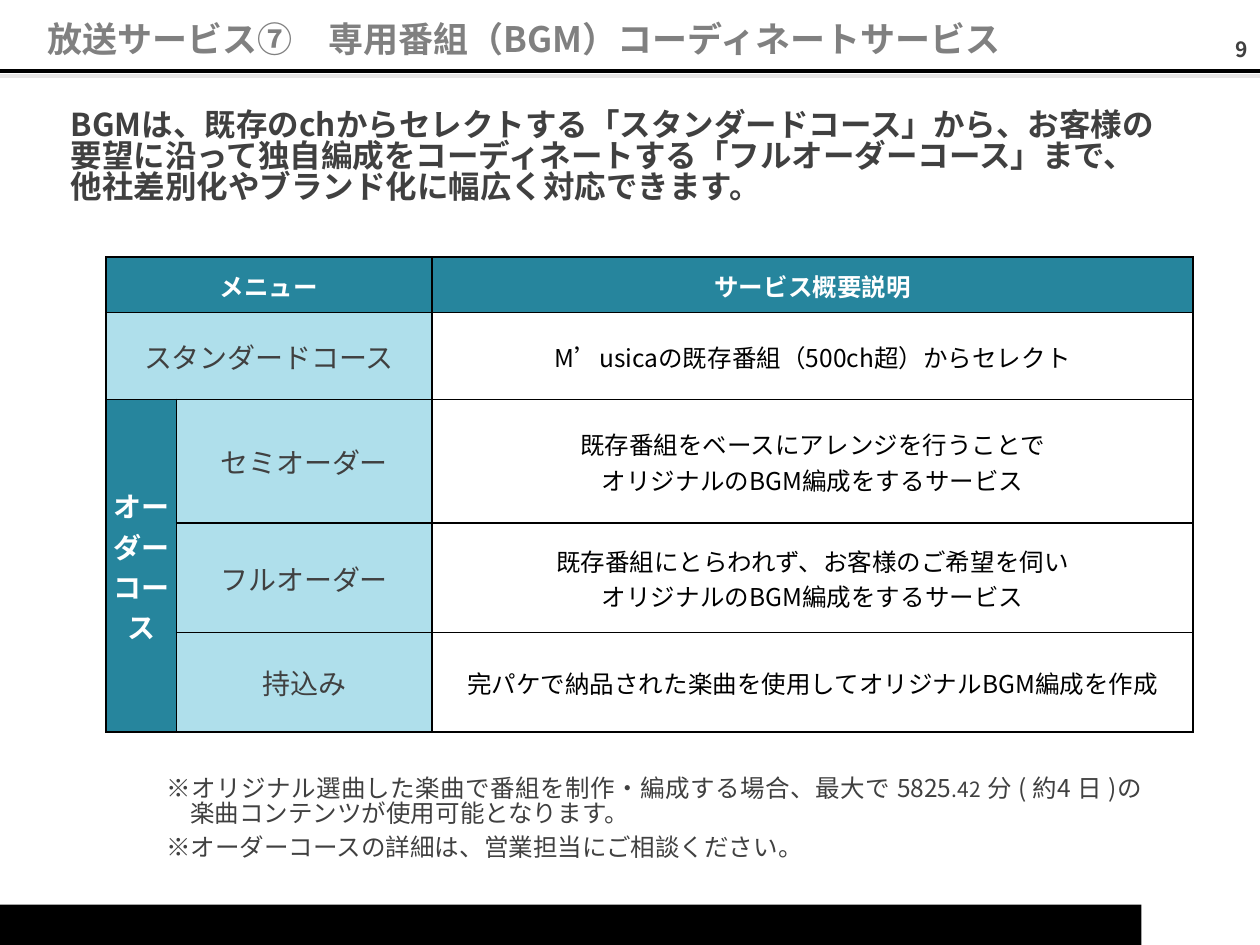
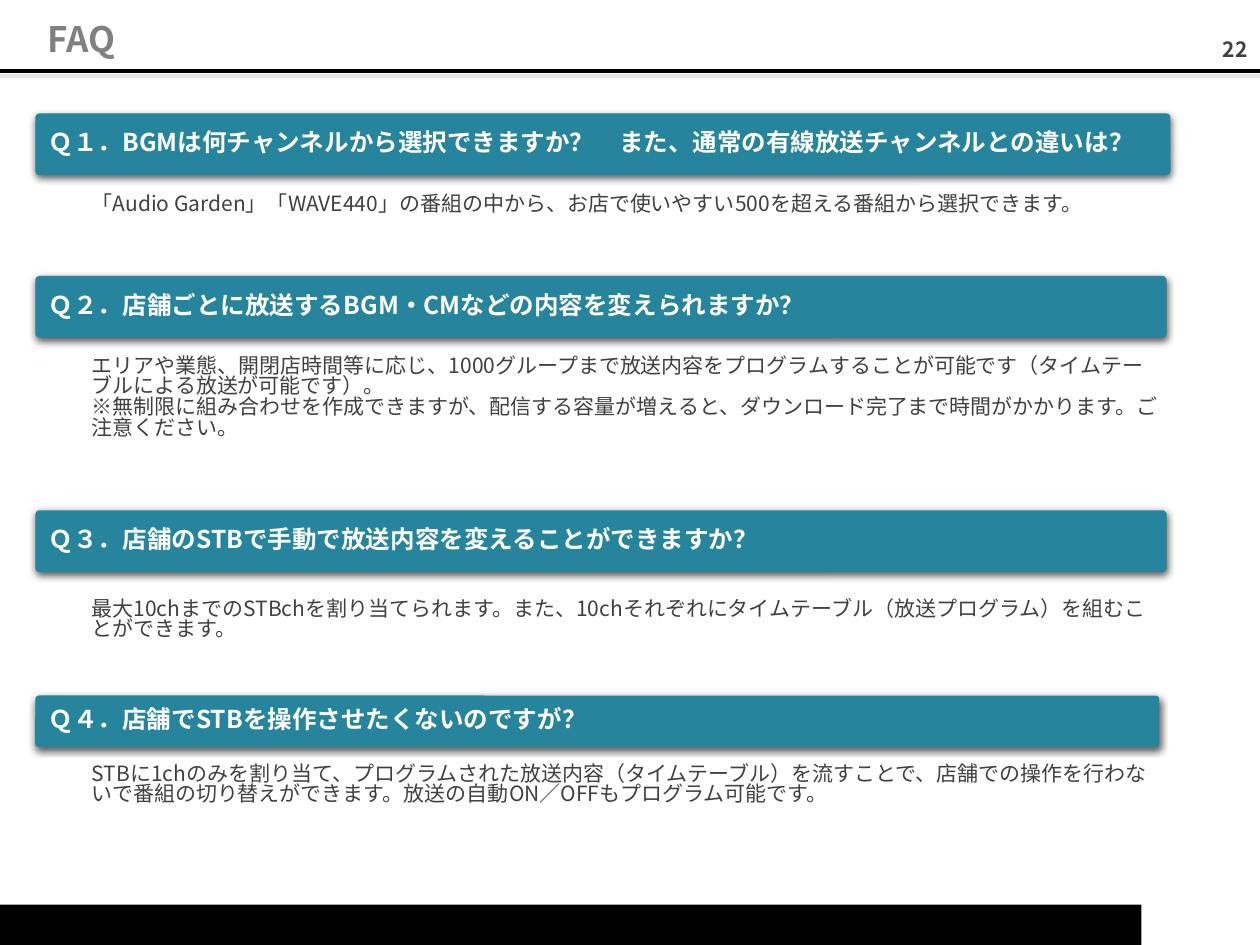
from typing import NamedTuple

from lxml.etree import SubElement
from pptx import Presentation
from pptx.dml.color import RGBColor
from pptx.enum.shapes import MSO_CONNECTOR as Connector, MSO_SHAPE as Shape
from pptx.enum.text import MSO_ANCHOR as Anchor, PP_ALIGN as Align
from pptx.oxml.ns import qn
from pptx.util import Emu, Inches, Pt

FONT = "Noto Sans CJK JP"
COLORS = {
    "black": "000000",
    "white": "FFFFFF",
    "gray": "E7E6E6",
    "title": "808080",
    "text": "404040",
    "teal": "26859D",
    "pale": "AFDFEB",
}
STYLES = {
    "title": {"size": Pt(20), "bold": True, "color": "title"},
    "number": {"size": Pt(12), "bold": True, "color": "text"},
    "lead": {"size": Pt(18), "bold": True, "color": "text"},
    "note": {"size": Pt(14), "bold": False, "color": "text"},
    "small": {"size": Pt(12), "bold": False, "color": "text"},
    "header": {"size": Pt(14), "bold": True, "color": "white"},
    "group": {"size": Pt(16), "bold": True, "color": "white"},
    "menu": {"size": Pt(16), "bold": False, "color": "text"},
    "detail": {"size": Pt(14), "bold": False, "color": "black"},
}
SLIDE_WIDTH, SLIDE_HEIGHT = Inches(10), Inches(7.5)
COLUMN, ROW = SLIDE_WIDTH / 100, SLIDE_HEIGHT / 75
TIGHT = 0.82


class Box(NamedTuple):
    col: float
    row: float
    cols: float
    rows: float

    def inner(self, col, row, cols, rows):
        return Box(self.col + col, self.row + row, cols, rows)

    def place(self):
        return (Emu(round(self.col * COLUMN)), Emu(round(self.row * ROW)),
                Emu(round(self.cols * COLUMN)), Emu(round(self.rows * ROW)))


PAGE = Box(0, 0, 100, 75)


def rgb(name):
    return RGBColor.from_string(COLORS[name])


def set_all(target, values):
    for name, value in values.items():
        setattr(target, name, value)


def add_span(para, text, style):
    span = para.add_run()
    span.text = text
    values = dict(STYLES[style])
    span.font.color.rgb = rgb(values.pop("color"))
    set_all(span.font, {"name": FONT, **values})
    SubElement(span._r.get_or_add_rPr(), qn("a:ea"), typeface=FONT)


def write(frame, paragraphs, style, **layout):
    for index, spans in enumerate(paragraphs):
        para = frame.add_paragraph() if index else frame.paragraphs[0]
        set_all(para, layout)
        for text, span_style in [(spans, style)] if isinstance(spans, str) else spans:
            add_span(para, text, span_style)


def add_text(page, box, paragraphs, style, anchor=Anchor.TOP, **layout):
    frame = page.shapes.add_textbox(*box.place()).text_frame
    set_all(frame, {"word_wrap": True, "vertical_anchor": anchor})
    if anchor == Anchor.TOP:
        frame.margin_top = Inches(0.07)
    write(frame, paragraphs, style, **{"line_spacing": TIGHT, **layout})
    return frame


def add_block(page, box, kind, fill=None, corner=None):
    block = page.shapes.add_shape(kind, *box.place())
    block.shadow.inherit = False
    block.line.fill.background()
    if fill:
        block.fill.solid()
        block.fill.fore_color.rgb = rgb(fill)
    else:
        block.fill.background()
    if corner:
        block.adjustments[0] = corner
    return block


def add_frame(page, box, title, number):
    add_block(page, box.inner(0, 71.8, 90.6, 3.2), Shape.RECTANGLE, "black")
    for row, color in ((5.6, "black"), (6, "gray")):
        left, top, width, _ = box.inner(0, row, box.cols, 0).place()
        rule = page.shapes.add_connector(Connector.STRAIGHT, left, top, left + width, top)
        rule.line.width = Pt(2.25)
        rule.line.color.rgb = rgb(color)
        SubElement(rule._element.spPr, qn("a:effectLst"))
    add_text(page, box.inner(89, 2.6, 11, 2.9), [number], "number",
             Anchor.MIDDLE, alignment=Align.RIGHT)
    add_text(page, box.inner(2.8, 1.3, 84.3, 4.4), [title], "title")


def add_lead(page, box, paragraphs):
    frame = add_block(page, box, Shape.ROUNDED_RECTANGLE, corner=0.106).text_frame
    set_all(frame, {"word_wrap": True, "vertical_anchor": Anchor.MIDDLE})
    write(frame, paragraphs, "lead", alignment=Align.LEFT, line_spacing=TIGHT)


def style_cell(cell, fill):
    set_all(cell, {"margin_left": Inches(0.01), "margin_right": Inches(0.01),
                   "margin_top": Inches(0.01), "margin_bottom": 0,
                   "vertical_anchor": Anchor.MIDDLE})
    props = cell._tc.get_or_add_tcPr()
    for side in ("lnL", "lnR", "lnT", "lnB"):
        border = SubElement(props, qn(f"a:{side}"), w=str(Pt(1)))
        paint = SubElement(border, qn("a:solidFill"))
        SubElement(paint, qn("a:srgbClr"), val=COLORS["black"])
    if fill:
        cell.fill.solid()
        cell.fill.fore_color.rgb = rgb(fill)
    else:
        cell.fill.background()


def add_menu_table(page, box, columns, heights, entries, merges):
    table = page.shapes.add_table(len(heights), len(columns), *box.place()).table
    set_all(table, {"first_row": False, "horz_banding": False})
    for column, cols in zip(table.columns, columns):
        column.width = Emu(round(cols * COLUMN))
    for row, rows in zip(table.rows, heights):
        row.height = Emu(round(rows * ROW))
    fills = {"header": "teal", "group": "teal", "menu": "pale", "detail": None}
    for row, line in enumerate(entries):
        for col, (style, paragraphs) in enumerate(line):
            cell = table.cell(row, col)
            style_cell(cell, fills[style])
            if paragraphs:
                write(cell.text_frame, paragraphs, style, alignment=Align.CENTER)
            if style == "group":
                cell._tc.get_or_add_tcPr().set("vert", "eaVert")
    for first, last in merges:
        table.cell(*first).merge(table.cell(*last))


def add_notes(page, box, paragraphs):
    frame = add_text(page, box, paragraphs, "note", space_after=Pt(6),
                     alignment=Align.JUSTIFY)
    frame.margin_right = Inches(0.27)
    for para in frame.paragraphs:
        props = para._p.get_or_add_pPr()
        props.set("marL", str(Inches(0.19)))
        props.set("indent", str(Inches(-0.19)))


def add_question(page, box, question, answers, drop, cols, rows):
    bar = add_block(page, box, Shape.ROUNDED_RECTANGLE, "teal", 0.07)
    effects = bar._element.spPr.find(qn("a:effectLst"))
    shadow = SubElement(effects, qn("a:outerShdw"), blurRad=str(Pt(4.5)),
                        dist=str(Pt(1.5)), dir="5400000", algn="ctr", rotWithShape="0")
    tone = SubElement(shadow, qn("a:srgbClr"), val=COLORS["black"])
    SubElement(tone, qn("a:alpha"), val="63000")
    set_all(bar.text_frame, {"word_wrap": True, "vertical_anchor": Anchor.MIDDLE})
    write(bar.text_frame, [question], "header", alignment=Align.LEFT, line_spacing=TIGHT)
    add_text(page, box.inner(3.5, drop, cols, rows), answers, "small")


def build_menu_page(page, box):
    add_frame(page, box, "放送サービス⑦　専用番組（BGM）コーディネートサービス", "9")
    add_lead(page, box.inner(4.4, 8.6, 90.5, 7.9), [
        "BGMは、既存のchからセレクトする「スタンダードコース」から、お客様の"
        "要望に沿って独自編成をコーディネートする「フルオーダーコース」まで、",
        "他社差別化やブランド化に幅広く対応できます。",
    ])
    arranged = "オリジナルのBGM編成をするサービス"
    entries = [
        [("header", ["メニュー"]), ("header", []), ("header", ["サービス概要説明"])],
        [("menu", ["スタンダードコース"]), ("menu", []),
         ("detail", ["M’usicaの既存番組（500ch超）からセレクト"])],
        [("group", ["オーダーコース"]), ("menu", ["セミオーダー"]),
         ("detail", ["既存番組をベースにアレンジを行うことで", arranged])],
        [("group", []), ("menu", ["フルオーダー"]),
         ("detail", ["既存番組にとらわれず、お客様のご希望を伺い", arranged])],
        [("group", []), ("menu", ["持込み"]),
         ("detail", ["完パケで納品された楽曲を使用してオリジナルBGM編成を作成"])],
    ]
    add_menu_table(page, box.inner(8.4, 20.4, 86.3, 37.7), (5.6, 20.3, 60.4),
                   (4.4, 6.9, 9.8, 8.7, 7.9), entries,
                   [((0, 0), (0, 1)), ((1, 0), (1, 1)), ((2, 0), (4, 0))])
    add_notes(page, box.inner(12.2, 61.1, 81.1, 8.9), [
        [("※オリジナル選曲した楽曲で番組を制作・編成する場合、最大で 5825", "note"),
         (".42", "small"),
         (" 分 ( 約4 日 )の楽曲コンテンツが使用可能となります。", "note")],
        "※オーダーコースの詳細は、営業担当にご相談ください。",
    ])


def build_faq_page(page, box):
    add_frame(page, box, "FAQ", "22")
    questions = [
        ((9, 90.1, 4.9), (5.8, 86.9, 3),
         "Ｑ１．BGMは何チャンネルから選択できますか？　また、通常の有線放送チャンネルとの違いは？",
         ["「Audio Garden」「WAVE440」の番組の中から、お店で使いやすい500を超える番組から選択できます。"]),
        ((21.9, 89.8, 4.9), (5.7, 86.9, 9.1),
         "Ｑ２．店舗ごとに放送するBGM・CMなどの内容を変えられますか？",
         ["エリアや業態、開閉店時間等に応じ、1000グループまで放送内容をプログラムすることが"
          "可能です（タイムテーブルによる放送が可能です）。",
          "※無制限に組み合わせを作成できますが、配信する容量が増えると、"
          "ダウンロード完了まで時間がかかります。ご注意ください。"]),
        ((40.5, 89.8, 4.9), (6.4, 86.3, 5),
         "Ｑ３．店舗のSTBで手動で放送内容を変えることができますか？",
         ["最大10chまでのSTBchを割り当てられます。また、10chそれぞれに"
          "タイムテーブル（放送プログラム）を組むことができます。"]),
        ((55.2, 89.2, 4.1), (4.8, 86.9, 5),
         "Ｑ４．店舗でSTBを操作させたくないのですが？",
         ["STBに1chのみを割り当て、プログラムされた放送内容（タイムテーブル）を流すことで、"
          "店舗での操作を行わないで番組の切り替えができます。"
          "放送の自動ON／OFFもプログラム可能です。"]),
    ]
    for (row, cols, rows), answer_place, question, answers in questions:
        add_question(page, box.inner(2.8, row, cols, rows), question, answers, *answer_place)


def main():
    deck = Presentation()
    set_all(deck, {"slide_width": SLIDE_WIDTH, "slide_height": SLIDE_HEIGHT})
    for build in (build_menu_page, build_faq_page):
        build(deck.slides.add_slide(deck.slide_layouts[6]), PAGE)
    deck.save("out.pptx")


if __name__ == "__main__":
    main()
